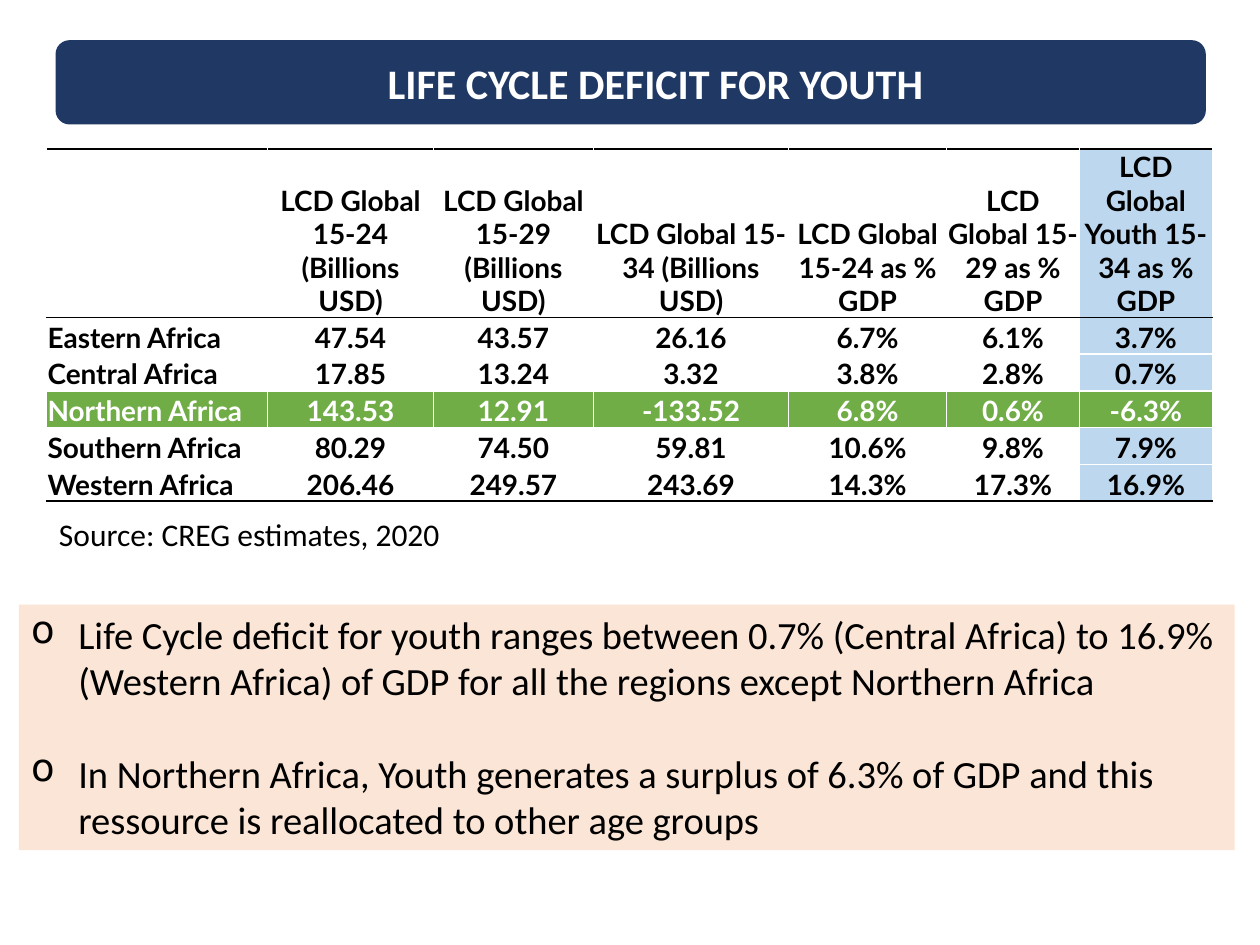
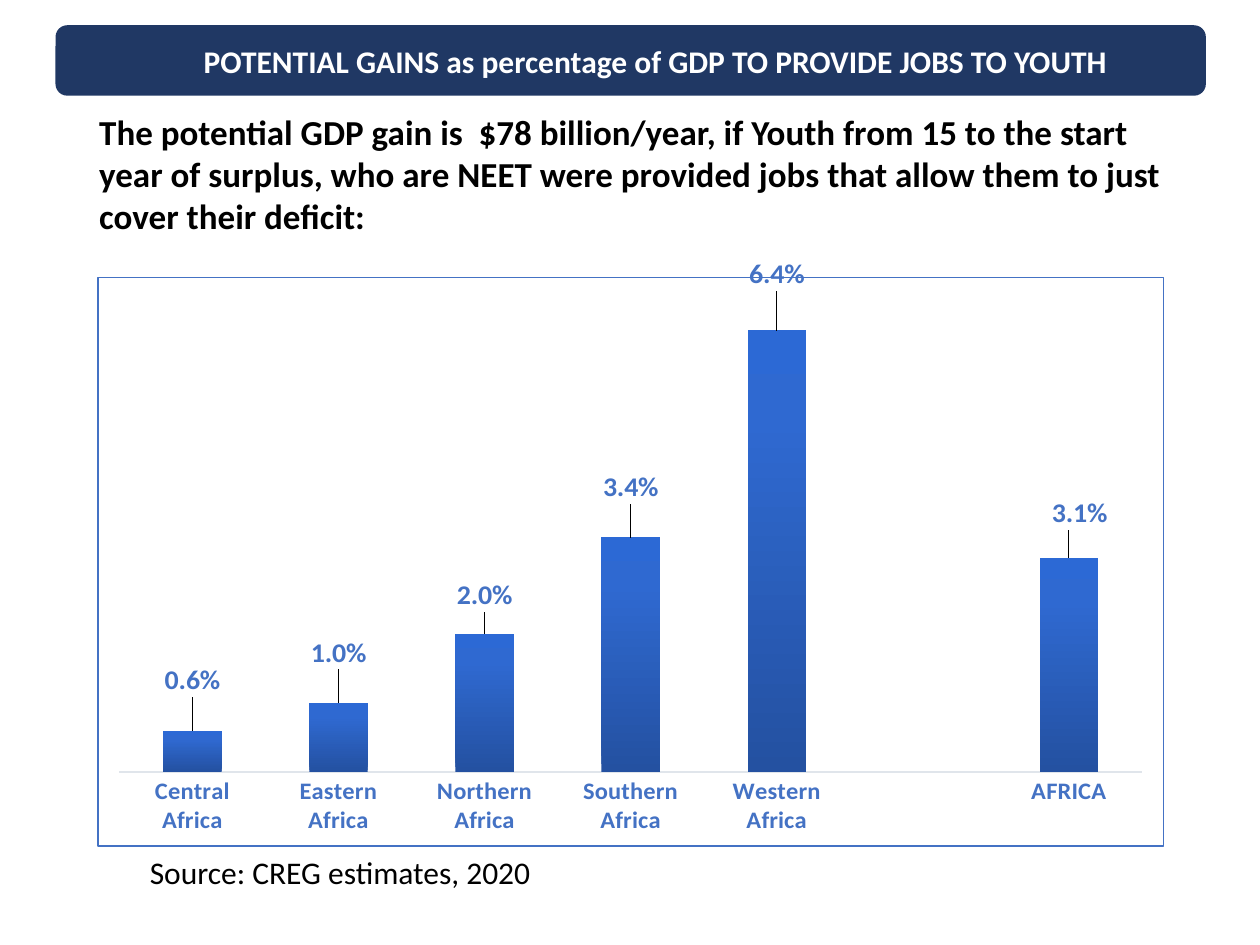
"""Builds two slides on the life cycle deficit of African youth."""
from dataclasses import dataclass

from lxml.etree import SubElement
from pptx import Presentation
from pptx.chart.data import CategoryChartData
from pptx.dml.color import RGBColor
from pptx.enum.chart import XL_CHART_TYPE, XL_LABEL_POSITION, XL_TICK_MARK
from pptx.enum.shapes import MSO_SHAPE
from pptx.enum.text import MSO_ANCHOR, PP_ALIGN
from pptx.oxml import parse_xml
from pptx.oxml.ns import nsdecls, qn
from pptx.util import Cm, Pt


@dataclass(frozen=True)
class Theme:
    """Colours, fonts and type sizes of the deck."""
    navy: str = "203864"
    white: str = "FFFFFF"
    black: str = "000000"
    sky: str = "BDD7EE"
    green: str = "70AD47"
    peach: str = "FBE5D6"
    blue: str = "4472C4"
    pale: str = "E0E5EB"
    shade: tuple = ((0, "2451A1"), (80, "2F69D1"), (100, "2C69D5"))
    face: str = "Calibri"
    grid: str = "Lato"
    title: int = 24
    point: int = 22
    lead: int = 20
    note: int = 18
    cell: int = 16
    axis: int = 14


def line_xml(tag, hue):
    """Return a one-point line element."""
    return parse_xml(
        f'<{tag} {nsdecls("a")} w="12700"><a:solidFill>'
        f'<a:srgbClr val="{hue}"/></a:solidFill></{tag}>')


class Deck:
    """Holds the style and the slide being built."""

    def __init__(self, theme):
        """Start an empty deck."""
        self.theme = theme
        self.show = Presentation()
        self.show.slide_width, self.show.slide_height = Cm(25.4), Cm(19.05)
        self.slide = None

    def page(self):
        """Add a blank slide."""
        self.slide = self.show.slides.add_slide(self.show.slide_layouts[6])

    def style(self, font, size, hue, bold=False, face=None):
        """Set the look of a font."""
        font.name, font.size, font.bold = face or self.theme.face, Pt(size), bold
        font.color.rgb = RGBColor.from_string(hue)

    def add_run(self, para, text, size, hue, bold=False, face=None,
                align=PP_ALIGN.LEFT):
        """Add one run to a paragraph."""
        para.alignment = align
        run = para.add_run()
        run.text = text
        self.style(run.font, size, hue, bold, face)

    def box(self, place, fill, kind=MSO_SHAPE.RECTANGLE):
        """Add a plain filled shape and return its text frame."""
        shape = self.slide.shapes.add_shape(kind, *map(Cm, place))
        shape.shadow.inherit = False
        shape.fill.solid()
        shape.fill.fore_color.rgb = RGBColor.from_string(fill)
        shape.line.fill.background()
        frame = shape.text_frame
        frame.word_wrap = True
        frame.vertical_anchor = MSO_ANCHOR.TOP
        return frame

    def band(self, text, top, height, size):
        """Add the title band."""
        look = self.theme
        frame = self.box((1.12, top, 23.19, height), look.navy,
                         MSO_SHAPE.ROUNDED_RECTANGLE)
        frame.vertical_anchor = MSO_ANCHOR.MIDDLE
        para = frame.paragraphs[0]
        para._p.get_or_add_pPr().set("marL", str(Cm(1)))
        self.add_run(para, text, size, look.white, True,
                     align=PP_ALIGN.CENTER)

    def source(self, left, top):
        """Add the source note."""
        look = self.theme
        frame = self.box((left, top, 9.2, 1.02), look.white)
        self.add_run(frame.paragraphs[0], "Source: CREG estimates, 2020",
                     look.note, look.black)

    def lead(self, text, place):
        """Add the bold lead text."""
        look = self.theme
        frame = self.slide.shapes.add_textbox(*map(Cm, place)).text_frame
        frame.word_wrap = True
        self.add_run(frame.paragraphs[0], text, look.lead, look.black, True)

    def points(self, texts, place):
        """Add a tinted box of bullet points."""
        look = self.theme
        frame = self.box(place, look.peach)
        for i, text in enumerate(texts):
            para = frame.add_paragraph() if i else frame.paragraphs[0]
            props = para._p.get_or_add_pPr()
            props.set("marL", str(Cm(0.95)))
            props.set("indent", str(-Cm(0.95)))
            SubElement(props, qn("a:buChar")).set("char", "o")
            if i:
                para.space_before = Pt(26.5)
            self.add_run(para, text, look.point, look.black)

    def cell(self, cell, text, fill, hue, align, rules):
        """Fill one table cell and draw its borders."""
        look = self.theme
        cell.margin_left = cell.margin_right = cell.margin_top = Cm(0.02)
        cell.margin_bottom = 0
        cell.vertical_anchor = MSO_ANCHOR.BOTTOM
        if text:
            self.add_run(cell.text_frame.paragraphs[0], text, look.cell, hue,
                         True, look.grid, align)
        if fill:
            cell.fill.solid()
            cell.fill.fore_color.rgb = RGBColor.from_string(fill)
        else:
            cell.fill.background()
        props = cell._tc.get_or_add_tcPr()
        for i, (side, tone) in enumerate(zip("LRTB", rules)):
            props.insert(i, line_xml(f"a:ln{side}", tone))

    def table(self, rows, place, widths, heights, accent):
        """Add the table, with one accent row and a tinted last column."""
        look = self.theme
        table = self.slide.shapes.add_table(
            len(rows), len(widths), *map(Cm, place)).table
        table.first_row = table.horz_banding = False
        for col, width in zip(table.columns, widths):
            col.width = Cm(width)
        final = len(rows) - 1
        for r, (row, height) in enumerate(zip(rows, heights)):
            table.rows[r].height = Cm(height)
            top = look.black if r < 2 else look.white
            base = look.black if r in (0, final) else look.white
            for c, text in enumerate(row):
                tint = look.sky if c == len(row) - 1 else None
                fill, hue = ((look.green, look.white) if r == accent
                             else (tint, look.black))
                align = PP_ALIGN.CENTER if c else PP_ALIGN.LEFT
                self.cell(table.cell(r, c), text, fill, hue, align,
                          (look.white, look.white, top, base))

    def chart(self, names, values, shifts, place):
        """Add the column chart with its shifted value labels."""
        look = self.theme
        data = CategoryChartData(number_format="0.0%")
        data.categories = names
        data.add_series("Series 1", values)
        chart = self.slide.shapes.add_chart(
            XL_CHART_TYPE.COLUMN_CLUSTERED, *map(Cm, place), data).chart
        chart.has_title = chart.has_legend = False
        self.style(chart.font, 10, look.black)
        self.axes(chart)
        plot = chart.plots[0]
        plot.gap_width, plot.vary_by_categories = 150, False
        series = plot.series[0]
        self.shade(series)
        self.labels(chart, series, shifts)
        self.frame(chart)

    def axes(self, chart):
        """Style the axes."""
        look = self.theme
        base, scale = chart.category_axis, chart.value_axis
        base.major_tick_mark = base.minor_tick_mark = XL_TICK_MARK.NONE
        self.style(base.tick_labels.font, look.axis, look.blue, True)
        base.format.line.color.rgb = RGBColor.from_string(look.pale)
        base.format.line.width = Pt(0.75)
        scale.minimum_scale, scale.maximum_scale = 0, 0.07
        scale.has_major_gridlines = scale.visible = False

    def shade(self, series):
        """Give the columns a gradient from bottom to top."""
        series.invert_if_negative = False
        stops = "".join(
            f'<a:gs pos="{spot * 1000}"><a:srgbClr val="{hue}"/></a:gs>'
            for spot, hue in self.theme.shade)
        series.format.fill.background()
        props = series._element.find(qn("c:spPr"))
        props.replace(props.find(qn("a:noFill")), parse_xml(
            f'<a:gradFill {nsdecls("a")}><a:gsLst>{stops}</a:gsLst>'
            '<a:lin ang="16200000" scaled="0"/></a:gradFill>'))

    def labels(self, chart, series, shifts):
        """Show the values and move each label by its shift."""
        look = self.theme
        every = series.data_labels
        every.show_value = True
        every.number_format, every.number_format_is_linked = "0.0%", False
        every.position = XL_LABEL_POSITION.OUTSIDE_END
        self.style(every.font, look.cell, look.blue, True)
        for i in shifts:
            label = series.points[i].data_label
            self.style(label.font, look.cell, look.blue, True)
            label.position = XL_LABEL_POSITION.OUTSIDE_END
        for node, (x, y) in zip(chart.element.xpath(".//c:dLbl"),
                                shifts.values()):
            node.insert(1, parse_xml(
                f'<c:layout {nsdecls("c")}><c:manualLayout>'
                f'<c:x val="{x}"/><c:y val="{y}"/>'
                '</c:manualLayout></c:layout>'))
            node.insert(2, parse_xml(
                f'<c:numFmt {nsdecls("c")} formatCode="0.0%" '
                'sourceLinked="0"/>'))

    def frame(self, chart):
        """Place the plot area and outline the chart."""
        look = self.theme
        area = chart.element.find(".//" + qn("c:plotArea"))
        for old in area.findall(qn("c:layout")):
            area.remove(old)
        sizes = "".join(f'<c:{key} val="{size}"/>' for key, size in
                        zip("xywh", (0.02, 0.02, 0.96, 0.85)))
        area.insert(0, parse_xml(
            f'<c:layout {nsdecls("c")}><c:manualLayout>'
            '<c:layoutTarget val="inner"/><c:xMode val="edge"/>'
            f'<c:yMode val="edge"/>{sizes}</c:manualLayout></c:layout>'))
        props = parse_xml(
            f'<c:spPr {nsdecls("c", "a")}><a:solidFill>'
            f'<a:srgbClr val="{look.white}"/></a:solidFill></c:spPr>')
        props.append(line_xml("a:ln", look.blue))
        chart.element.find(qn("c:txPr")).addprevious(props)


def main():
    """Build and save the deck."""
    look = Theme()
    deck = Deck(look)

    deck.page()
    deck.band("LIFE CYCLE DEFICIT FOR YOUTH", 0.81, 1.7, look.title)
    deck.source(0.94, 10.26)
    rows = [
        ("", "LCD Global 15-24 (Billions USD)",
         "LCD Global 15-29 (Billions USD)", "LCD Global 15-34 (Billions USD)",
         "LCD Global 15-24 as % GDP", "LCD Global 15-29 as % GDP",
         "LCD Global Youth 15-34 as % GDP"),
        ("Eastern Africa", "47.54", "43.57", "26.16", "6.7%", "6.1%", "3.7%"),
        ("Central Africa", "17.85", "13.24", "3.32", "3.8%", "2.8%", "0.7%"),
        ("Northern Africa", "143.53", "12.91", "-133.52", "6.8%", "0.6%",
         "-6.3%"),
        ("Southern Africa", "80.29", "74.50", "59.81", "10.6%", "9.8%",
         "7.9%"),
        ("Western Africa", "206.46", "249.57", "243.69", "14.3%", "17.3%",
         "16.9%"),
    ]
    deck.table(rows, (0.94, 3, 23.5, 7.14),
               (4.45, 3.35, 3.22, 3.94, 3.18, 2.68, 2.68),
               [3.4] + [0.74] * 5, accent=3)
    deck.points((
        "Life Cycle deficit for youth ranges between 0.7% (Central Africa) to "
        "16.9% (Western Africa) of GDP for all the regions except Northern "
        "Africa",
        "In Northern Africa, Youth generates a surplus of 6.3% of GDP and "
        "this ressource is reallocated to other age groups",
    ), (0.38, 12.19, 24.51, 4.95))

    deck.page()
    deck.band("POTENTIAL GAINS as percentage of GDP TO PROVIDE JOBS TO YOUTH",
              0.51, 1.42, look.note)
    deck.source(2.77, 17.07)
    deck.lead("The potential GDP gain is  $78 billion/year, if Youth from 15 "
              "to the start year of surplus, who are NEET were provided jobs "
              "that allow them to just cover their deficit:",
              (1.75, 2.11, 22.23, 2.82))
    deck.chart(
        ("Central Africa", "Eastern Africa", "Northern Africa",
         "Southern Africa", "Western Africa", "", "AFRICA"),
        (0.006, 0.01, 0.02, 0.034, 0.064, None, 0.031),
        {0: (0, -0.05), 1: (0, -0.05), 2: (0, -0.03), 3: (0, -0.05),
         4: (0, -0.06), 6: (0.01, -0.04)},
        (1.96, 5.21, 21.51, 11.86))
    deck.show.save("out.pptx")


if __name__ == "__main__":
    main()
